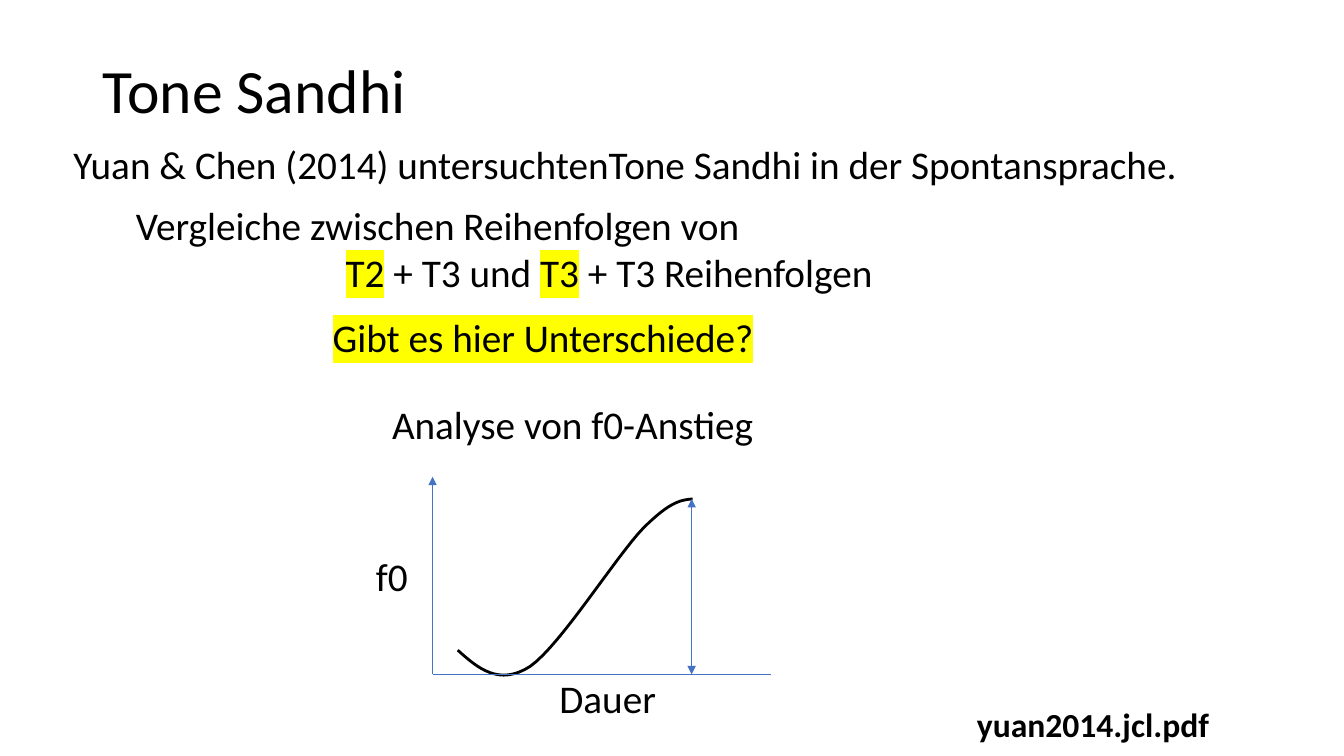
from lxml.etree import SubElement
from pptx import Presentation
from pptx.dml.color import RGBColor
from pptx.enum.shapes import MSO_CONNECTOR as Connector
from pptx.enum.text import MSO_ANCHOR as Anchor
from pptx.oxml.ns import qn
from pptx.util import Inches, Pt

BLACK = RGBColor(0x00, 0x00, 0x00)
BLUE = RGBColor(0x44, 0x72, 0xC4)
YELLOW = RGBColor(0xFF, 0xFF, 0x00)

WIDTH, HEIGHT = 13.33, 7.5
BODY = 28
PLAIN, MARKED = False, True

TITLE = (0.92, 0.2, 11.5, 1.45), [[("Tone Sandhi", PLAIN)]]
SOURCE_FILE = (9.59, 6.93, 3.31, 0.5), [[("yuan2014.jcl.pdf", PLAIN)]]
COMPARISON = (1.25, 1.95, 11.17, 1.04), [
    [("Vergleiche zwischen Reihenfolgen von", PLAIN)],
    [("T2", MARKED), (" + T3 und ", PLAIN), ("T3", MARKED), (" + T3 Reihenfolgen", PLAIN)],
]
TONE_PAIR_INDENT = 2.08
LABELS = [
    ((0.63, 1.34, 11.28, 0.57), "Yuan & Chen (2014) untersuchtenTone Sandhi in der Spontansprache.", PLAIN),
    ((3.2, 3.06, 4.42, 0.57), "Gibt es hier Unterschiede?", MARKED),
    ((3.79, 3.92, 3.83, 0.57), "Analyse von f0-Anstieg", PLAIN),
    ((3.63, 5.43, 0.52, 0.57), "f0", PLAIN),
    ((5.45, 6.64, 1.17, 0.57), "Dauer", PLAIN),
]

ORIGIN_X, BASELINE = 4.29, 6.69
PEAK_X, PEAK_Y = 6.86, 4.95
AXES = [
    ((ORIGIN_X, BASELINE), (7.65, BASELINE), []),
    ((PEAK_X, PEAK_Y), (PEAK_X, BASELINE), ["headEnd", "tailEnd"]),
    ((ORIGIN_X, BASELINE), (ORIGIN_X, 4.73), ["tailEnd"]),
]
CONTOUR_START = (4.54, 6.45)
CONTOUR = [
    ((4.74, 6.63), (4.95, 6.81), (5.26, 6.61)),
    ((5.56, 6.4), (6.11, 5.52), (6.38, 5.24)),
    ((6.65, 4.97), (6.76, 4.96), (6.87, 4.95)),
]
STEPS = 16


def add_text(slide, box, lines, size=BODY, bold=False, wrap=True):
    frame = slide.shapes.add_textbox(*map(Inches, box)).text_frame
    frame.word_wrap = wrap
    for number, pieces in enumerate(lines):
        line = frame.add_paragraph() if number else frame.paragraphs[0]
        line.font.size, line.font.name, line.font.bold = Pt(size), "Calibri", bold
        line.font.color.rgb = BLACK
        for wording, marked in pieces:
            run = line.add_run()
            run.text = wording
            if marked:
                highlight = SubElement(run._r.get_or_add_rPr(), qn("a:highlight"))
                SubElement(highlight, qn("a:srgbClr"), val=str(YELLOW))
    return frame


def add_axis(slide, start, end, arrowheads):
    axis = slide.shapes.add_connector(Connector.STRAIGHT, *map(Inches, start + end))
    axis.line.color.rgb, axis.line.width = BLUE, Pt(0.5)
    for arrowhead in arrowheads:
        SubElement(axis.line._get_or_add_ln(), qn(f"a:{arrowhead}"), type="triangle")
    SubElement(axis._element.spPr, qn("a:effectLst"))


def curve_points(start, segments):
    points = [start]
    for first, second, end in segments:
        for t in (step / STEPS for step in range(1, STEPS + 1)):
            weights = (1 - t) ** 3, 3 * t * (1 - t) ** 2, 3 * t**2 * (1 - t), t**3
            points.append(tuple(
                sum(w * v for w, v in zip(weights, values))
                for values in zip(start, first, second, end)
            ))
        start = end
    return points


def add_contour(slide):
    start, *rest = [(Inches(x), Inches(y)) for x, y in curve_points(CONTOUR_START, CONTOUR)]
    builder = slide.shapes.build_freeform(*start)
    builder.add_line_segments(rest, close=False)
    contour = builder.convert_to_shape()
    contour.shadow.inherit = False
    contour.fill.background()
    contour.line.color.rgb, contour.line.width = BLACK, Pt(2)


def main():
    """Build the tone sandhi slide."""
    deck = Presentation()
    deck.slide_width, deck.slide_height = Inches(WIDTH), Inches(HEIGHT)
    slide = deck.slides.add_slide(deck.slide_layouts[6])

    heading = add_text(slide, *TITLE, size=44)
    heading.vertical_anchor = Anchor.MIDDLE
    heading.paragraphs[0].line_spacing = 0.9
    comparison = add_text(slide, *COMPARISON)
    tone_pairs = comparison.paragraphs[1]._p.get_or_add_pPr()
    tone_pairs.set("marL", str(Inches(TONE_PAIR_INDENT)))
    for box, wording, marked in LABELS:
        add_text(slide, box, [[(wording, marked)]], wrap=False)
    add_contour(slide)
    for axis in AXES:
        add_axis(slide, *axis)
    add_text(slide, *SOURCE_FILE, size=24, bold=True)
    deck.save("out.pptx")


if __name__ == "__main__":
    main()
